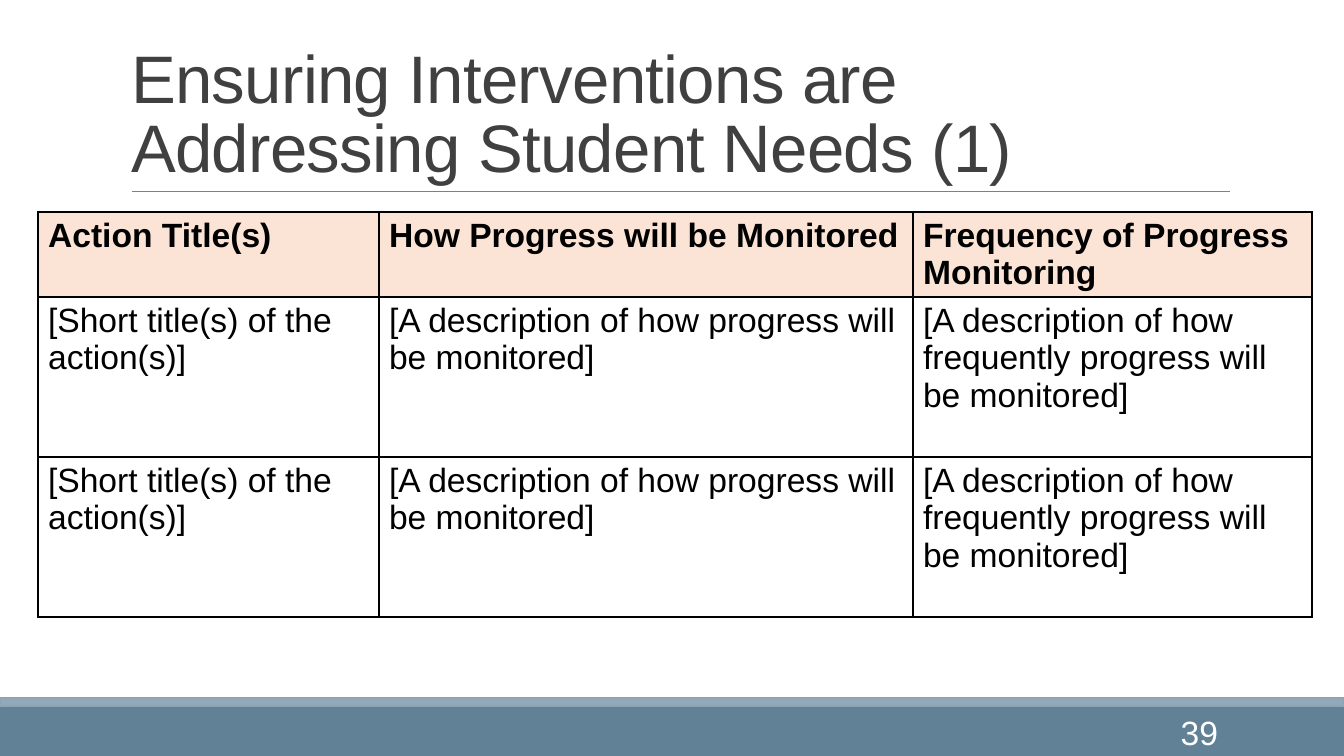
from pptx import Presentation, util as u
from pptx.dml.color import RGBColor
from pptx.enum import shapes, text
from pptx.oxml import parse_xml
from pptx.oxml.ns import nsdecls

EMU_PER_PX = 914400 / 100.8
COLOURS = {
    "bar": "618197", "strip": "92A9B9", "strip_edge": "8FA3B6", "rule": "808080",
    "title": "404040", "ink": "000000", "header": "FBE4D5", "white": "FFFFFF",
}


def px(length):
    return u.Emu(round(length * EMU_PER_PX))


def colour(name):
    return RGBColor.from_string(COLOURS[name])


class SlideBuilder:
    font = "Arial"

    def __init__(self, page):
        self.page = page

    def span(self, para, words, size, ink, bold=False):
        span = para.add_run()
        span.text = words
        span.font.name, span.font.size = self.font, u.Pt(size)
        span.font.bold = bold
        span.font.color.rgb = colour(ink)
        return span

    def bar(self, left, top, width, height, fill, edge=None):
        bar = self.page.shapes.add_shape(
            shapes.MSO_SHAPE.RECTANGLE, *map(px, (left, top, width, height)))
        bar.shadow.inherit = False
        bar.fill.solid()
        bar.fill.fore_color.rgb = colour(fill)
        if edge:
            bar.line.color.rgb = colour(edge)
            bar.line.width = u.Pt(1.25)
        else:
            bar.line.fill.background()

    def rule(self, left, right, y):
        rule = self.page.shapes.add_connector(
            shapes.MSO_CONNECTOR.STRAIGHT, px(left), px(y), px(right), px(y))
        rule.line.color.rgb = colour("rule")
        rule.line.width = u.Pt(0.5)
        rule._element.spPr.append(parse_xml(f"<a:effectLst {nsdecls('a')}/>"))

    def title(self, left, top, width, height, words):
        box = self.page.shapes.title
        box.left, box.top, box.width, box.height = map(px, (left, top, width, height))
        frame = box.text_frame
        frame.word_wrap = True
        frame.auto_size = text.MSO_AUTO_SIZE.NONE
        frame.vertical_anchor = text.MSO_ANCHOR.BOTTOM
        para = frame.paragraphs[0]
        para.alignment = text.PP_ALIGN.LEFT
        para.line_spacing = 0.85
        span = self.span(para, words, 48, "title")
        span._r.get_or_add_rPr().set("spc", "-50")

    def page_number(self, left, top, width, height, number):
        box = self.page.shapes.add_textbox(*map(px, (left, top, width, height)))
        frame = box.text_frame
        frame.word_wrap = True
        frame.vertical_anchor = text.MSO_ANCHOR.MIDDLE
        para = frame.paragraphs[0]
        para.alignment = text.PP_ALIGN.RIGHT
        self.span(para, number, 24, "white")

    def cell_borders(self, cell):
        for side in ("lnL", "lnR", "lnT", "lnB"):
            cell._tc.get_or_add_tcPr().append(parse_xml(
                f'<a:{side} {nsdecls("a")} w="{u.Pt(1)}"><a:solidFill>'
                f'<a:srgbClr val="{COLOURS["ink"]}"/></a:solidFill></a:{side}>'))

    def table(self, left, top, widths, heights, rows):
        table = self.page.shapes.add_table(
            len(rows), len(widths), px(left), px(top),
            px(sum(widths)), px(sum(heights))).table
        table.horz_banding = False
        for column, width in zip(table.columns, widths):
            column.width = px(width)
        for r, (height, row) in enumerate(zip(heights, rows)):
            table.rows[r].height = px(height)
            for c, words in enumerate(row):
                cell = table.cell(r, c)
                self.cell_borders(cell)
                if r == 0:
                    cell.fill.solid()
                    cell.fill.fore_color.rgb = colour("header")
                else:
                    cell.fill.background()
                self.span(cell.text_frame.paragraphs[0], words, 24, "ink", bold=r == 0)


def main():
    deck = Presentation()
    deck.slide_width, deck.slide_height = px(1344), px(756)
    title_only = deck.slide_layouts[5]
    slide = SlideBuilder(deck.slides.add_slide(title_only))

    slide.bar(0, 707, 1344, 49, "bar")
    slide.bar(0, 698, 1344, 8, "strip", "strip_edge")
    slide.rule(132, 1230, 191)
    slide.title(121, 31, 1109, 160,
                "Ensuring Interventions are Addressing Student Needs (1)")

    header = ["Action Title(s)", "How Progress will be Monitored",
              "Frequency of Progress Monitoring"]
    prompts = ["[Short title(s) of the action(s)]",
               "[A description of how progress will be monitored]",
               "[A description of how frequently progress will be monitored]"]
    slide.table(38, 212, [341, 534, 399], [85, 160, 160], [header, prompts, prompts])
    slide.page_number(1084, 712, 144, 40, "39")
    deck.save("out.pptx")


if __name__ == "__main__":
    main()
